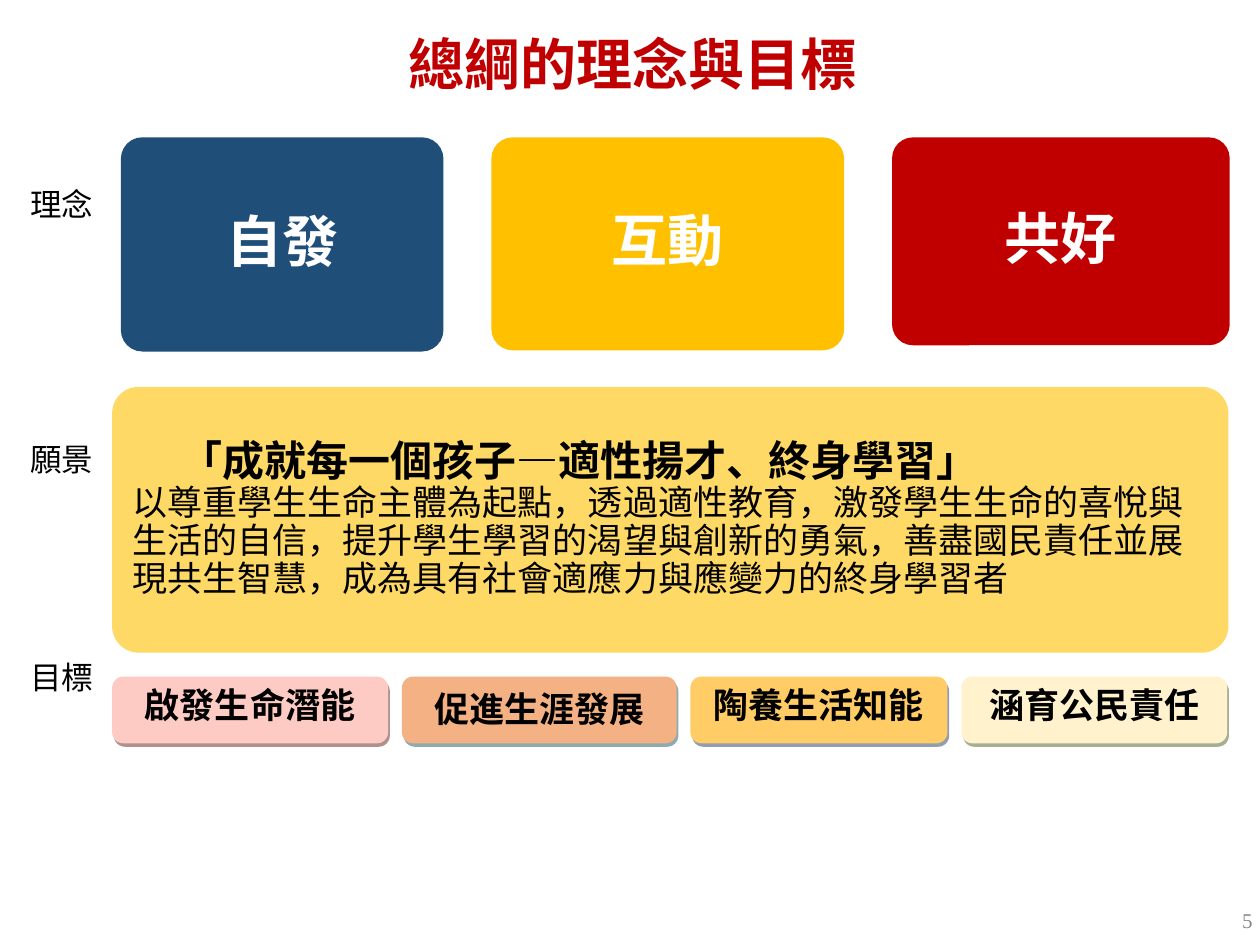
"""Build the slide on the ideas, vision and goals of the curriculum guidelines."""
from lxml import etree
from pptx import Presentation
from pptx import util as u
from pptx.dml.color import RGBColor
from pptx.enum import shapes, text
from pptx.oxml.ns import qn

COLORS = {
    "black": "000000", "white": "FFFFFF", "grey": "898989",
    "blue": "1F4E79", "gold": "FFC000", "red": "C00000", "sand": "FFD966",
    "pink": "FDCBC3", "orange": "F4B183", "amber": "FFCC66", "cream": "FFF2CC",
    "maroon": "622423", "teal": "205867", "navy": "243F60", "olive": "4E6128",
}
CENTER, LEFT, RIGHT = text.PP_ALIGN.CENTER, text.PP_ALIGN.LEFT, text.PP_ALIGN.RIGHT
TOP, MIDDLE = text.MSO_ANCHOR.TOP, text.MSO_ANCHOR.MIDDLE


class SlideBuilder:
    """Hold the style and the current slide."""

    font = "Noto Sans CJK SC"

    def __init__(self, page):
        self.page = page

    def style(self, para, size, color="black", bold=False, align=LEFT,
              spacing=1.0, after=0, before=0, font=None):
        """Format a paragraph and its runs."""
        para.alignment, para.line_spacing = align, spacing
        para.space_before, para.space_after = u.Pt(before), u.Pt(after)
        for span in para.runs:
            span.font.size, span.font.bold = u.Pt(size), bold
            span.font.color.rgb = RGBColor.from_string(COLORS[color])
            span.font.name = font or self.font
            latin = span.font._element.find(qn("a:latin"))
            east = etree.Element(qn("a:ea"), typeface=font or self.font)
            latin.addnext(east)

    def frame(self, box, anchor, inset=None):
        """Prepare the text frame of a box."""
        frame = box.text_frame
        frame.word_wrap, frame.vertical_anchor = True, anchor
        if inset is not None:
            frame.margin_left = frame.margin_right = u.Inches(inset)
            frame.margin_top = frame.margin_bottom = u.Inches(inset)
        return frame

    def title(self, words, place):
        """Fill and move the title placeholder."""
        box = self.page.shapes.title
        box.left, box.top, box.width, box.height = map(u.Inches, place)
        frame = self.frame(box, MIDDLE)
        frame.text = words
        self.style(frame.paragraphs[0], 32, "red", True, CENTER, 0.9)

    def text_box(self, place, anchor=TOP):
        """Add an empty text box and return its frame."""
        return self.frame(self.page.shapes.add_textbox(*map(u.Inches, place)), anchor)

    def panel(self, place, fill, radius=0.1, anchor=MIDDLE, inset=None):
        """Add a rounded rectangle without outline."""
        box = self.page.shapes.add_shape(
            shapes.MSO_SHAPE.ROUNDED_RECTANGLE, *map(u.Inches, place))
        box.adjustments[0] = radius
        box.fill.solid()
        box.fill.fore_color.rgb = RGBColor.from_string(COLORS[fill])
        box.line.fill.background()
        box.shadow.inherit = False
        self.frame(box, anchor, inset)
        return box

    def drop_shadow(self, box, color):
        """Give a box a hard, half-transparent shadow."""
        effects = box._element.spPr.find(qn("a:effectLst"))
        shadow = etree.SubElement(effects, qn("a:outerShdw"), blurRad="0",
                                  dist=str(u.Pt(2.2)), dir=str(63 * 60000),
                                  algn="ctr", rotWithShape="0")
        tint = etree.SubElement(shadow, qn("a:srgbClr"), val=COLORS[color])
        etree.SubElement(tint, qn("a:alpha"), val="50000")

    def idea(self, words, place, fill):
        """Add a large idea card."""
        frame = self.panel(place, fill, inset=0.13).text_frame
        frame.text = words
        self.style(frame.paragraphs[0], 32, "white", True, CENTER, 0.9, 11.2)

    def vision(self, heading, body, place):
        """Add the vision panel with an indented heading."""
        frame = self.panel(place, "sand", inset=0.1).text_frame
        frame.text = f"{heading}\n{body}"
        first, second = frame.paragraphs
        first._p.get_or_add_pPr().set("marL", str(u.Inches(0.38)))
        self.style(first, 24, bold=True, spacing=0.9)
        self.style(second, 20, spacing=0.9, after=7)

    def goal(self, words, place, fill, shadow, anchor):
        """Add a small goal card with a shadow."""
        box = self.panel(place, fill, 0.167, anchor)
        self.drop_shadow(box, shadow)
        box.text_frame.text = words
        self.style(box.text_frame.paragraphs[0], 20, "black", True, CENTER, 0.96)

    def row_labels(self, labels, place):
        """Add the row names, spread by paragraph spacing."""
        frame = self.text_box(place)
        frame.text = "\n".join(words for words, _ in labels)
        for para, (_, before) in zip(frame.paragraphs, labels):
            self.style(para, 18, before=before)

    def number(self, words, place):
        """Add the slide number."""
        frame = self.text_box(place, MIDDLE)
        frame.text = words
        self.style(frame.paragraphs[0], 12, "grey", align=RIGHT, font="Times New Roman")


def main():
    """Compose and save the slide."""
    deck = Presentation()
    deck.slide_width, deck.slide_height = u.Inches(10), u.Inches(7.5)
    builder = SlideBuilder(deck.slides.add_slide(deck.slide_layouts[5]))

    builder.title("總綱的理念與目標", (0.52, 0.14, 9, 0.79))
    builder.vision(
        "「成就每一個孩子—適性揚才、終身學習」",
        "以尊重學生生命主體為起點，透過適性教育，激發學生生命的喜悅與生活的自信，"
        "提升學生學習的渴望與創新的勇氣，善盡國民責任並展現共生智慧，"
        "成為具有社會適應力與應變力的終身學習者",
        (0.89, 3.07, 8.86, 2.11))

    for words, left, width, height, fill in (
            ("自發", 0.96, 2.56, 1.7, "blue"),
            ("互動", 3.9, 2.8, 1.69, "gold"),
            ("共好", 7.08, 2.68, 1.65, "red")):
        builder.idea(words, (left, 1.09, width, height), fill)

    left, gap = 0.89, 0.11
    for words, width, fill, shadow, anchor in (
            ("啟發生命潛能", 2.19, "pink", "maroon", TOP),
            ("促進生涯發展", 2.18, "orange", "teal", MIDDLE),
            ("陶養生活知能", 2.04, "amber", "navy", TOP),
            ("涵育公民責任", 2.11, "cream", "olive", TOP)):
        builder.goal(words, (left, 5.37, width, 0.53), fill, shadow, anchor)
        left += width + gap

    builder.row_labels((("理念", 0), ("願景", 124), ("目標", 103)),
                       (0.14, 1.42, 0.75, 4.34))
    builder.number("5", (7.71, 7.1, 2.33, 0.4))
    deck.save("out.pptx")


if __name__ == "__main__":
    main()
